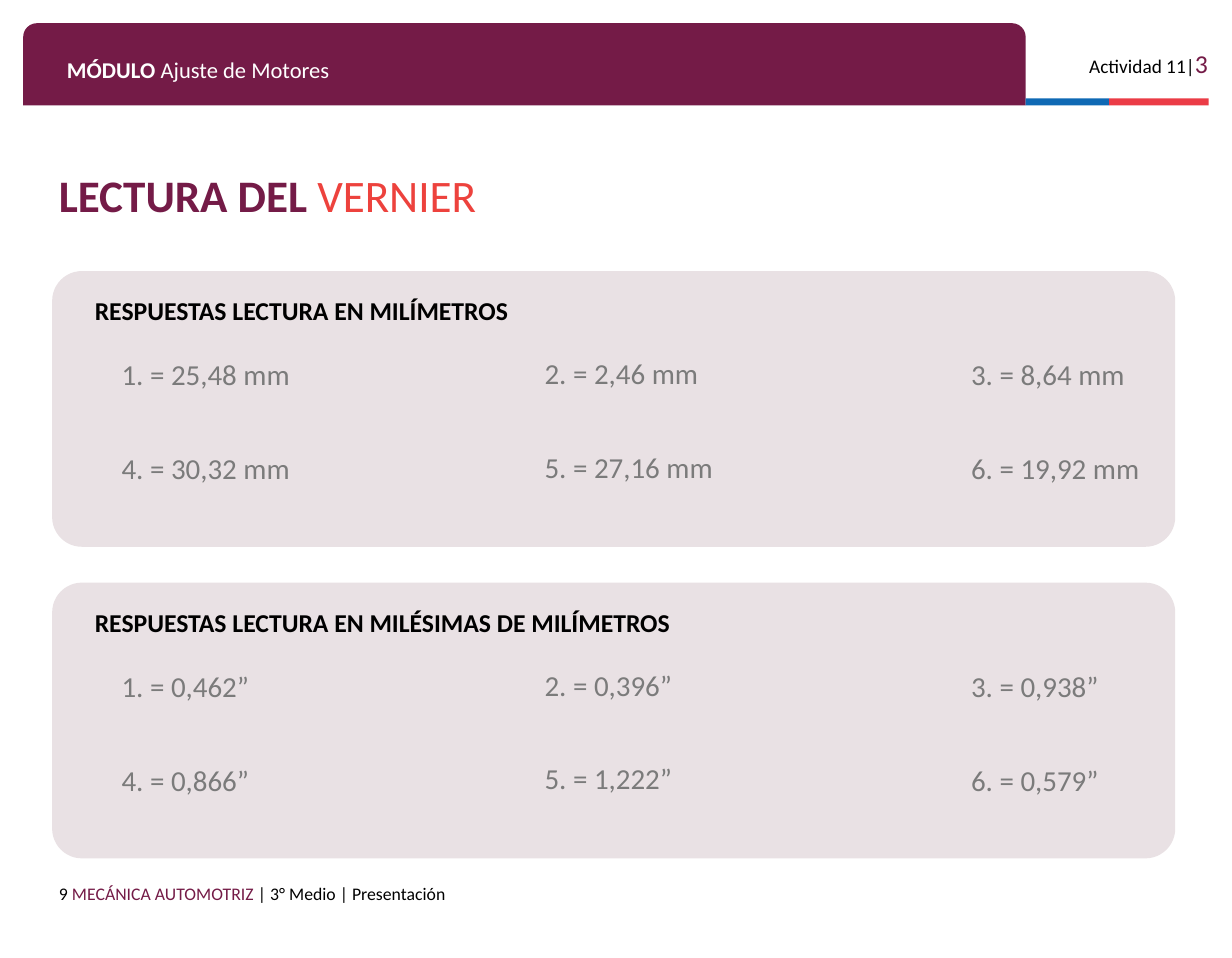
from pptx import Presentation
from pptx.dml.color import RGBColor
from pptx.enum.shapes import MSO_SHAPE
from pptx.enum.text import MSO_ANCHOR, PP_ALIGN
from pptx.util import Emu, Pt

PX = 9144  # 100 px to the inch
WIDTH, HEIGHT = 1063, 827

PLUM = RGBColor(0x74, 0x1B, 0x47)
BLUE = RGBColor(0x0F, 0x69, 0xB4)
RED = RGBColor(0xEB, 0x3C, 0x46)
CORAL = RGBColor(0xED, 0x42, 0x3D)
PALE = RGBColor(0xE9, 0xE1, 0xE4)
GREY = RGBColor(0x7B, 0x7B, 0x7B)
BLACK = RGBColor(0, 0, 0)
WHITE = RGBColor(0xFF, 0xFF, 0xFF)

RECT = MSO_SHAPE.RECTANGLE
ROUNDED = MSO_SHAPE.ROUNDED_RECTANGLE
TOP_ROUNDED = MSO_SHAPE.ROUND_2_SAME_RECTANGLE
TOP, MIDDLE = MSO_ANCHOR.TOP, MSO_ANCHOR.MIDDLE
LEFT, RIGHT = PP_ALIGN.LEFT, PP_ALIGN.RIGHT

COLUMNS = ((95, 0), (460, -1), (828, 0))  # left edge, vertical nudge
ROW_STEP = 81
SECTIONS = (
    (234, "RESPUESTAS LECTURA EN MILÍMETROS", 229,
     ("25,48 mm", "2,46 mm", "8,64 mm", "30,32 mm", "27,16 mm", "19,92 mm")),
    (503, "RESPUESTAS LECTURA EN MILÉSIMAS DE MILÍMETROS", 178,
     ("0,462”", "0,396”", "0,938”", "0,866”", "1,222”", "0,579”")),
)


def px(*lengths):
    return [Emu(length * PX) for length in lengths]


class SlideBuilder:
    def __init__(self, slide, font):
        self.slide = slide
        self.font = font

    def block(self, preset, box, color, adjustments=()):
        shape = self.slide.shapes.add_shape(preset, *px(*box))
        for index, value in enumerate(adjustments):
            shape.adjustments[index] = value
        shape.shadow.inherit = False
        shape.fill.solid()
        shape.fill.fore_color.rgb = color
        shape.line.fill.background()

    def text(self, box, runs, inset=10, anchor=TOP, align=LEFT, spacing=1.0):
        """Add one paragraph; each run is (text, size, color, bold)."""
        frame = self.slide.shapes.add_textbox(*px(*box)).text_frame
        side, vertical = px(10, inset)
        frame_format = {
            "word_wrap": True, "vertical_anchor": anchor,
            "margin_left": side, "margin_right": side,
            "margin_top": vertical, "margin_bottom": vertical,
        }
        for name, value in frame_format.items():
            setattr(frame, name, value)
        paragraph = frame.paragraphs[0]
        paragraph.alignment = align
        paragraph.line_spacing = spacing
        for words, size, color, bold in runs:
            run = paragraph.add_run()
            run.text = words
            run_format = {"name": self.font, "size": Pt(size), "bold": bold}
            for name, value in run_format.items():
                setattr(run.font, name, value)
            run.font.color.rgb = color

    def answers(self, top, heading, width, readings):
        """Add a rounded panel with a heading and numbered readings."""
        self.block(ROUNDED, (45, top, 969, 238), PALE, (0.108,))
        self.text((72, top + 12, 640, 40), [(heading, 16, BLACK, True)],
                  inset=5, spacing=1.15)
        for index, reading in enumerate(readings):
            row, column = divmod(index, len(COLUMNS))
            left, nudge = COLUMNS[column]
            answer_top = top + 69 + row * ROW_STEP + nudge
            self.text((left, answer_top, width, 40),
                      [(f"{index + 1}. = {reading}", 18, GREY, False)], inset=5)


def main():
    deck = Presentation()
    deck.slide_width, deck.slide_height = px(WIDTH, HEIGHT)
    builder = SlideBuilder(deck.slides.add_slide(deck.slide_layouts[6]), "Calibri")

    builder.block(TOP_ROUNDED, (20, 20, 865, 71), PLUM, (0.167, 0))
    builder.block(RECT, (885, 85, 72, 6), BLUE)
    builder.block(RECT, (957, 85, 86, 6), RED)
    builder.text((924, 31, 128, 38),
                 [("Actividad 11|", 12, BLACK, False), ("3", 16, PLUM, False)],
                 align=RIGHT)
    builder.text((48, 38, 814, 35),
                 [("MÓDULO ", 14, WHITE, True),
                  ("Ajuste de Motores", 14, WHITE, False)])
    builder.text((41, 150, 405, 44),
                 [("LECTURA DEL ", 28, PLUM, True), ("VERNIER", 28, CORAL, False)],
                 anchor=MIDDLE, spacing=0.8)
    for section in SECTIONS:
        builder.answers(*section)
    builder.text((41, 753, 742, 38),
                 [("9 ", 11, BLACK, False),
                  ("MECÁNICA AUTOMOTRIZ", 11, PLUM, False),
                  (" | 3° Medio | Presentación", 11, BLACK, False)])

    deck.save("out.pptx")


if __name__ == "__main__":
    main()
